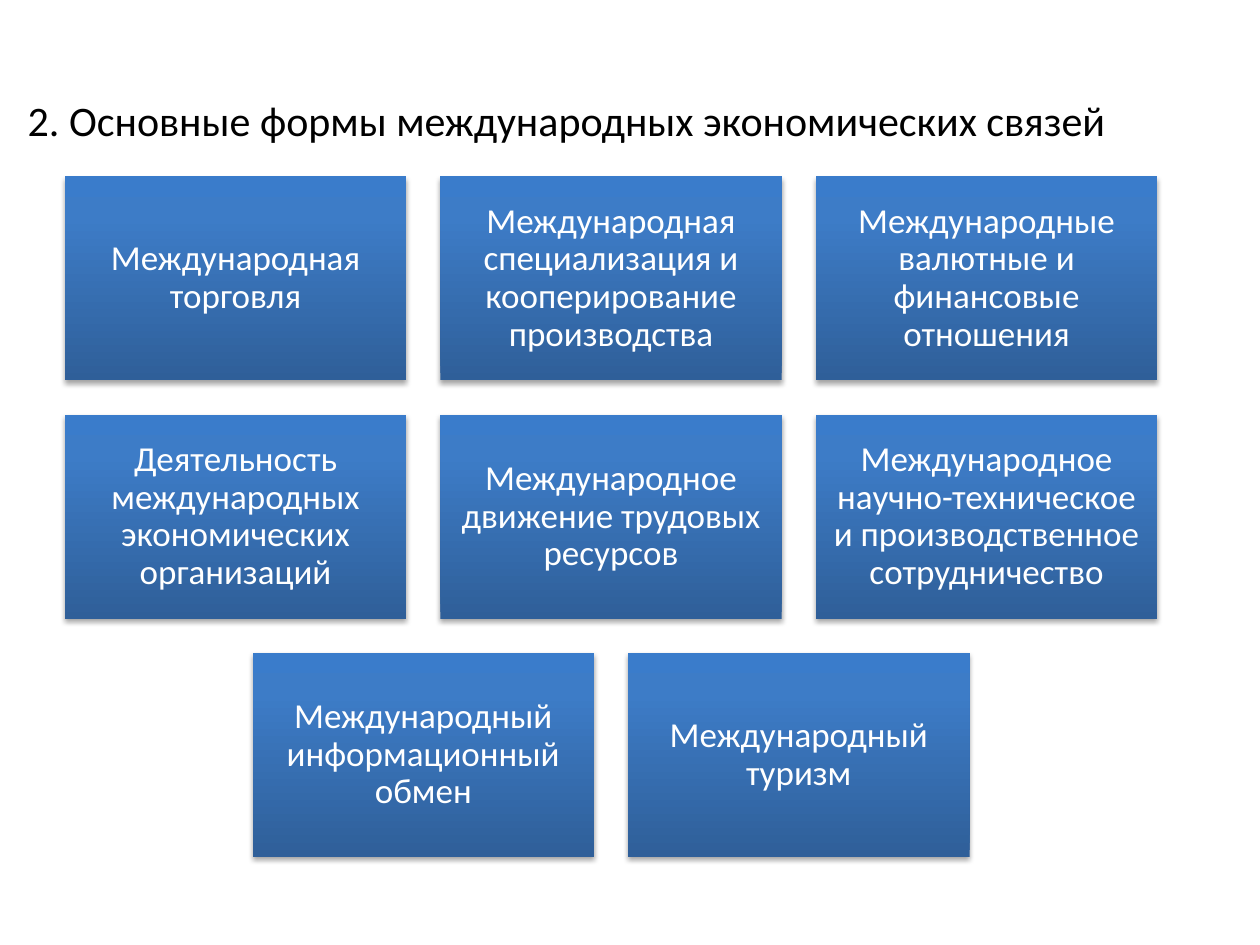
from pptx import Presentation
from pptx.dml.color import RGBColor
from pptx.enum.shapes import MSO_SHAPE
from pptx.enum.text import MSO_ANCHOR, MSO_AUTO_SIZE, PP_ALIGN
from pptx.oxml import parse_xml
from pptx.oxml.ns import nsdecls
from pptx.util import Inches, Pt

BLACK = RGBColor(0x00, 0x00, 0x00)
WHITE = RGBColor(0xFF, 0xFF, 0xFF)
GRADIENT = [
    (0, RGBColor(0x2F, 0x5F, 0x99)),
    (80, RGBColor(0x3D, 0x7C, 0xC7)),
    (100, RGBColor(0x3A, 0x7C, 0xCB)),
]
FONT = "Calibri"

TITLE = "2. Основные формы международных экономических связей"
ROWS = [
    [
        "Международная торговля",
        "Международная специализация и кооперирование производства",
        "Международные валютные и финансовые отношения",
    ],
    [
        "Деятельность международных экономических организаций",
        "Международное движение трудовых ресурсов",
        "Международное научно-техническое и производственное сотрудничество",
    ],
    ["Международный информационный обмен", "Международный туризм"],
]

CARD_WIDTH, CARD_HEIGHT, GAP = 2.71, 1.62, 0.27
GRID_CENTER, GRID_TOP = 4.85, 1.4


def format_text(text_frame, text, size, color, alignment):
    text_frame.text = text
    text_frame.word_wrap = True
    paragraph = text_frame.paragraphs[0]
    paragraph.alignment = alignment
    font = paragraph.runs[0].font
    font.name = FONT
    font.size = Pt(size)
    font.color.rgb = color
    return paragraph


def add_title(slide):
    title = slide.shapes.title
    title.left, title.top = Inches(0.12), Inches(0.7)
    title.width, title.height = Inches(9.76), Inches(0.5)
    text_frame = title.text_frame
    format_text(text_frame, TITLE, 24, BLACK, PP_ALIGN.LEFT)
    text_frame.vertical_anchor = MSO_ANCHOR.TOP
    text_frame.auto_size = MSO_AUTO_SIZE.SHAPE_TO_FIT_TEXT


def style_card(shape):
    """Give the card a bottom-to-top gradient, no outline and a soft shadow."""
    shape.line.fill.background()
    stops = "".join(
        f'<a:gs pos="{position * 1000}"><a:srgbClr val="{color}"/></a:gs>'
        for position, color in GRADIENT
    )
    outline = shape.line._get_or_add_ln()
    outline.addprevious(parse_xml(
        f'<a:gradFill {nsdecls("a")} rotWithShape="1"><a:gsLst>{stops}</a:gsLst>'
        '<a:lin ang="16200000" scaled="0"/></a:gradFill>'
    ))
    outline.addnext(parse_xml(
        f'<a:effectLst {nsdecls("a")}>'
        f'<a:outerShdw blurRad="{Pt(3.1)}" dist="{Pt(1.8)}" dir="5400000" rotWithShape="0">'
        '<a:srgbClr val="000000"><a:alpha val="35000"/></a:srgbClr>'
        '</a:outerShdw></a:effectLst>'
    ))


def add_card(slide, left, top, text):
    shape = slide.shapes.add_shape(
        MSO_SHAPE.RECTANGLE,
        Inches(left), Inches(top), Inches(CARD_WIDTH), Inches(CARD_HEIGHT),
    )
    style_card(shape)
    text_frame = shape.text_frame
    paragraph = format_text(text_frame, text, 20, WHITE, PP_ALIGN.CENTER)
    paragraph.line_spacing = 0.9
    text_frame.vertical_anchor = MSO_ANCHOR.MIDDLE
    text_frame.margin_left = text_frame.margin_right = Inches(0.08)
    text_frame.margin_top = text_frame.margin_bottom = Inches(0.08)


def add_card_row(slide, top, texts):
    """Place one row of cards centred on the grid's middle."""
    row_width = len(texts) * (CARD_WIDTH + GAP) - GAP
    left = GRID_CENTER - row_width / 2
    for column, text in enumerate(texts):
        add_card(slide, left + column * (CARD_WIDTH + GAP), top, text)


def main():
    presentation = Presentation()
    presentation.slide_width = Inches(10)
    presentation.slide_height = Inches(7.5)
    slide = presentation.slides.add_slide(presentation.slide_layouts[5])
    add_title(slide)
    for row, texts in enumerate(ROWS):
        add_card_row(slide, GRID_TOP + row * (CARD_HEIGHT + GAP), texts)
    presentation.save("out.pptx")


if __name__ == "__main__":
    main()
